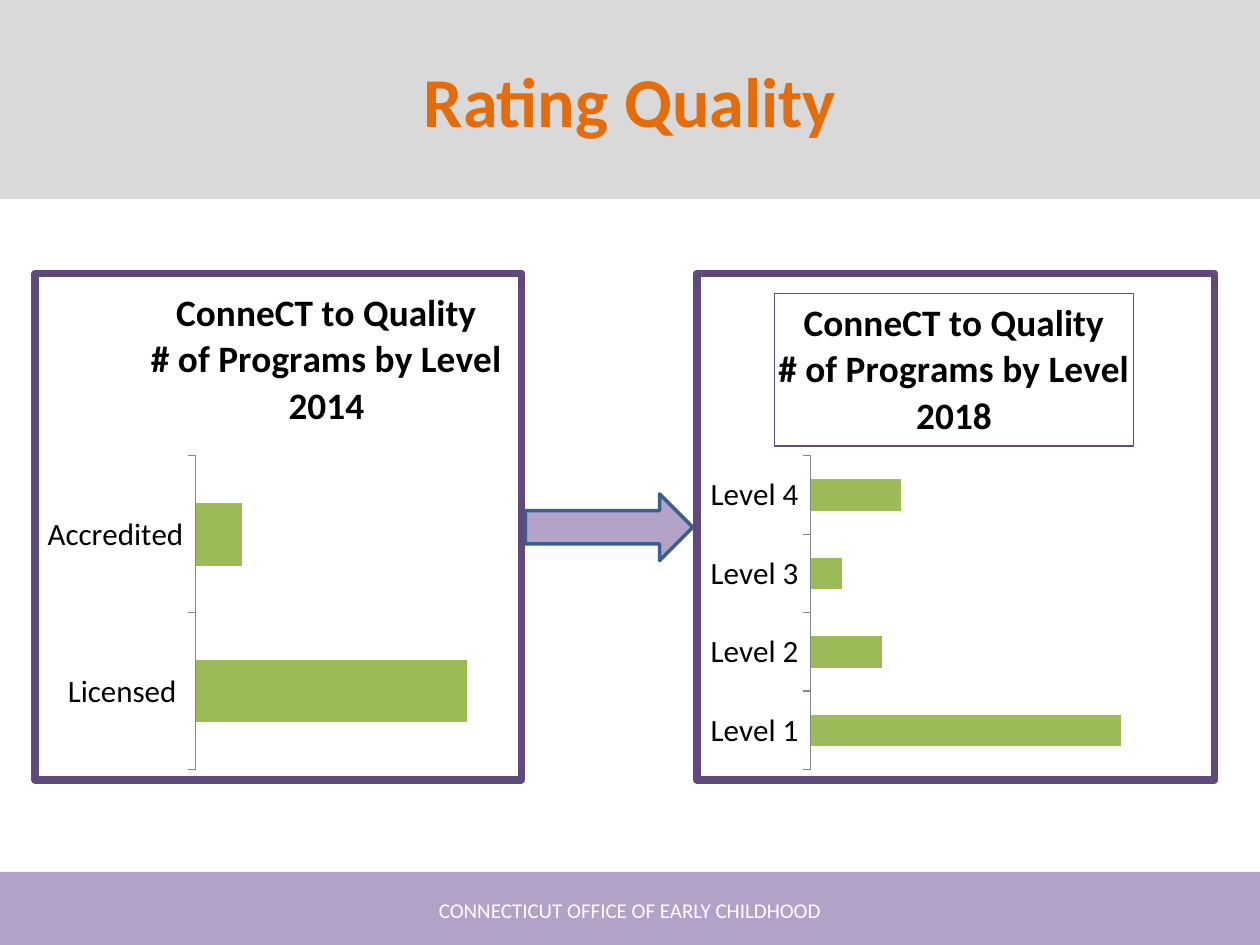
"""Build the Rating Quality slide with its 2014 and 2018 bar charts."""
from dataclasses import dataclass

from lxml.etree import SubElement
from pptx import Presentation
from pptx.chart.data import CategoryChartData
from pptx.dml.color import RGBColor
from pptx.enum.chart import XL_CHART_TYPE, XL_TICK_MARK
from pptx.enum.shapes import MSO_SHAPE
from pptx.enum.text import MSO_ANCHOR, PP_ALIGN
from pptx.oxml import parse_xml
from pptx.oxml.ns import nsdecls, qn
from pptx.util import Inches, Pt


@dataclass(frozen=True)
class Theme:
    font: str = "Calibri"
    gray: str = "D9D9D9"
    orange: str = "E46C0A"
    lilac: str = "B3A2C7"
    purple: str = "604A7B"
    green: str = "9BBB59"
    blue: str = "3A5F8C"
    axis: str = "868686"
    white: str = "FFFFFF"
    black: str = "000000"
    title: float = 40
    head: float = 21.6
    label: float = 18
    foot: float = 12


theme = Theme()
color = RGBColor.from_string


def style(font, size, tint, bold):
    font.name = theme.font
    font.size = Pt(size)
    font.bold = bold
    font.color.rgb = color(tint)


def place(node, index, spot):
    for old in node.findall(qn("c:layout")):
        node.remove(old)
    layout = parse_xml(f"<c:layout {nsdecls('c')}/>")
    manual = SubElement(layout, qn("c:manualLayout"))
    if "w" in spot:
        SubElement(manual, qn("c:layoutTarget"), val="inner")
    for key in ("x", "y"):
        SubElement(manual, qn(f"c:{key}Mode"), val="edge")
    for key, share in spot.items():
        SubElement(manual, qn(f"c:{key}"), val=str(share))
    node.insert(index, layout)


deck = Presentation()
deck.slide_width = Inches(10)
deck.slide_height = Inches(7.5)
slide = deck.slides.add_slide(deck.slide_layouts[6])
shapes = slide.shapes

bands = [
    (0, 1.58, theme.gray, "Rating Quality", theme.title, theme.orange, True),
    (6.92, 0.6, theme.lilac, "CONNECTICUT OFFICE OF EARLY CHILDHOOD",
     theme.foot, theme.white, False),
]
for top, height, fill, text, size, tint, bold in bands:
    band = shapes.add_shape(
        MSO_SHAPE.RECTANGLE, 0, Inches(top), Inches(10), Inches(height))
    band.shadow.inherit = False
    band.fill.solid()
    band.fill.fore_color.rgb = color(fill)
    band.line.fill.background()
    band.text_frame.vertical_anchor = MSO_ANCHOR.MIDDLE
    para = band.text_frame.paragraphs[0]
    para.alignment = PP_ALIGN.CENTER
    run = para.add_run()
    run.text = text
    style(run.font, size, tint, bold)

panels = [
    ("2014", 0.25, 3.92, {"Licensed ": 100, "Accredited": 17},
     {"x": 0.23, "y": 0.02}, {"x": 0.33, "y": 0.36, "w": 0.67, "h": 0.62}, False),
    ("2018", 5.5, 4.17,
     {"Level 1": 100, "Level 2": 23, "Level 3": 10, "Level 4": 29},
     {"x": 0.15, "y": 0.04}, {"x": 0.22, "y": 0.36, "w": 0.72, "h": 0.62}, True),
]
for year, left, width, counts, head, area, framed in panels:
    data = CategoryChartData()
    data.categories = list(counts)
    data.add_series("Series 1", list(counts.values()))
    chart = shapes.add_chart(
        XL_CHART_TYPE.BAR_CLUSTERED, Inches(left), Inches(2.14),
        Inches(width), Inches(4.08), data).chart
    style(chart.font, theme.label, theme.black, False)
    chart.has_legend = False

    chart.has_title = True
    title = chart.chart_title
    frame = title.text_frame
    for row, text in enumerate(("ConneCT to Quality", "# of Programs by Level", year)):
        para = frame.add_paragraph() if row else frame.paragraphs[0]
        para.alignment = PP_ALIGN.CENTER
        run = para.add_run()
        run.text = text
        style(run.font, theme.head, theme.black, True)
    place(title.element, 1, head)
    if framed:
        title.format.line.color.rgb = color(theme.purple)
        title.format.line.width = Pt(0.75)

    plot = chart.plots[0]
    plot.gap_width = 150
    plot.vary_by_categories = False
    bars = plot.series[0].format.fill
    bars.solid()
    bars.fore_color.rgb = color(theme.green)
    place(chart.element.find(".//" + qn("c:plotArea")), 0, area)

    chart.category_axis.major_tick_mark = XL_TICK_MARK.OUTSIDE
    chart.category_axis.format.line.color.rgb = color(theme.axis)
    scale = chart.value_axis
    scale.minimum_scale = 0
    scale.maximum_scale = 120
    scale.has_major_gridlines = False
    scale.visible = False

    border = parse_xml(
        f"<c:spPr {nsdecls('c', 'a')}><a:noFill/><a:ln w=\"{Pt(4.5)}\">"
        f"<a:solidFill><a:srgbClr val=\"{theme.purple}\"/></a:solidFill>"
        "<a:round/></a:ln></c:spPr>")
    chart.element.find(qn("c:chart")).addnext(border)

arrow = shapes.add_shape(
    MSO_SHAPE.RIGHT_ARROW, Inches(4.17), Inches(3.92), Inches(1.33), Inches(0.53))
arrow.shadow.inherit = False
arrow.fill.solid()
arrow.fill.fore_color.rgb = color(theme.lilac)
arrow.line.color.rgb = color(theme.blue)
arrow.line.width = Pt(2)

deck.save("out.pptx")
